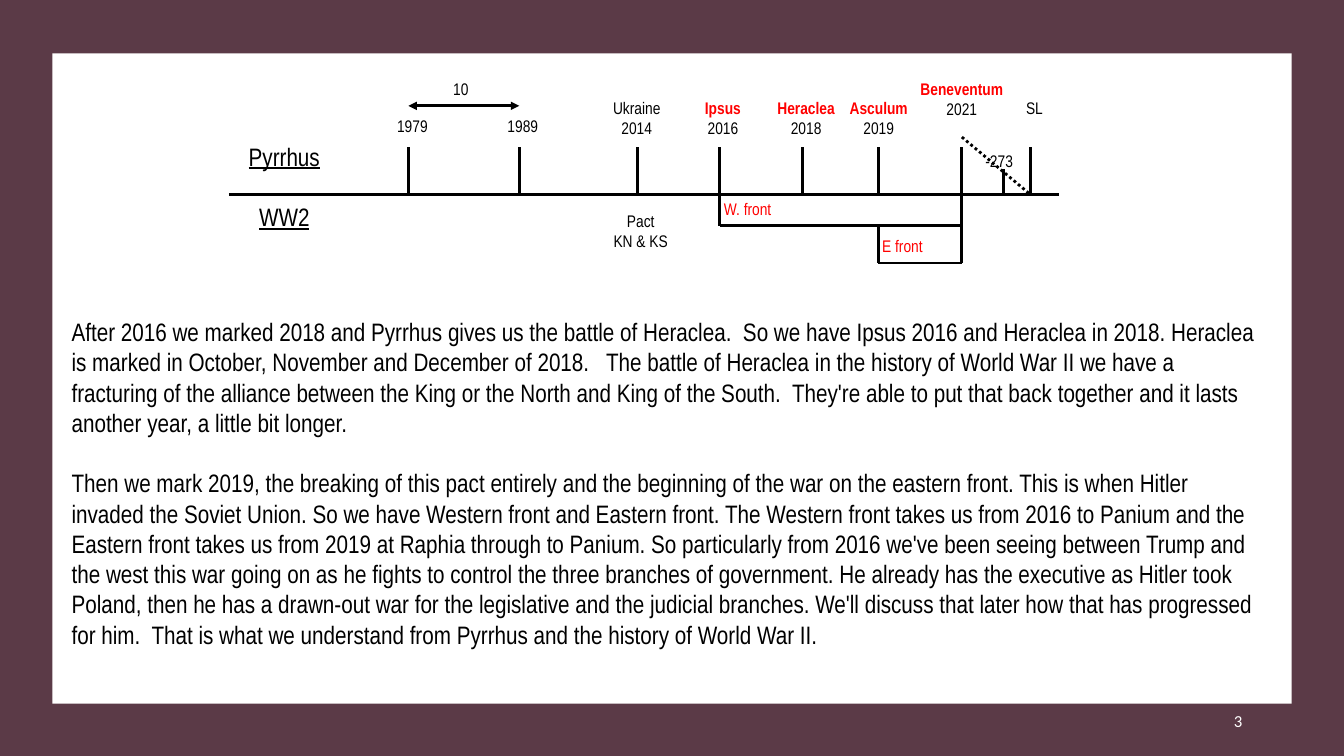
from dataclasses import dataclass

from lxml.etree import SubElement
from pptx import Presentation
from pptx.dml.color import RGBColor
from pptx.enum.dml import MSO_LINE
from pptx.enum.shapes import MSO_CONNECTOR, MSO_SHAPE
from pptx.enum.text import MSO_ANCHOR, MSO_AUTO_SIZE, PP_ALIGN
from pptx.oxml.ns import qn
from pptx.util import Inches, Pt


@dataclass(frozen=True)
class Theme:
    frame: RGBColor = RGBColor(0x5B, 0x3A, 0x47)
    paper: RGBColor = RGBColor(0xFF, 0xFF, 0xFF)
    ink: RGBColor = RGBColor(0, 0, 0)
    battle: RGBColor = RGBColor(0xFF, 0, 0)
    face: str = "Arial Narrow"
    page_face: str = "Calibri"
    small: int = 12
    large: int = 18
    rule: int = 2
    gap: float = 21.6


THEME = Theme()

AXIS = 1.93
WEST = 2.24
EAST = 2.61
TICK = 1.46
YEARS = {1979: 4.05, 1989: 5.15, 2014: 6.32, 2016: 7.14,
         2018: 7.96, 2019: 8.71, 2021: 9.54}
END = 10.22
DEATH = 9.95

BATTLES = [
    ("Ipsus", "2016", 6.86, 0.93, 0.62),
    ("Heraclea", "2018", 7.62, 0.93, 0.75),
    ("Asculum", "2019", 8.37, 0.93, 0.69),
    ("Beneventum", "2021", 9.06, 0.74, 0.96),
]
FRONTS = [("W. front", 7.14, 1.93), ("E front", 8.71, 2.3)]
LABELS = [
    (["SL"], 10.02, 0.93, 0.48, 0.5),
    (["1979"], 3.78, 1.11, 0.62, 0.31),
    (["1989"], 4.81, 1.11, 0.75, 0.31),
    (["Ukraine", "2014"], 5.97, 0.93, 0.69, 0.5),
    (["-273"], 9.67, 1.46, 0.48, 0.28),
    (["Pact", "KN & KS"], 5.84, 2.05, 1.03, 0.62),
    (["10"], 4.26, 0.74, 0.62, 0.31),
]
STORY = [
    "After 2016 we marked 2018 and Pyrrhus gives us the battle of Heraclea.  "
    "So we have Ipsus 2016 and Heraclea in 2018. Heraclea is marked in "
    "October, November and December of 2018.   The battle of Heraclea in the "
    "history of World War II we have a fracturing of the alliance between the "
    "King or the North and King of the South.  They're able to put that back "
    "together and it lasts another year, a little bit longer.",
    "Then we mark 2019, the breaking of this pact entirely and the beginning "
    "of the war on the eastern front. This is when Hitler invaded the Soviet "
    "Union. So we have Western front and Eastern front. The Western front "
    "takes us from 2016 to Panium and the Eastern front takes us from 2019 at "
    "Raphia through to Panium. So particularly from 2016 we've been seeing "
    "between Trump and the west this war going on as he fights to control the "
    "three branches of government. He already has the executive as Hitler "
    "took Poland, then he has a drawn-out war for the legislative and the "
    "judicial branches. We'll discuss that later how that has progressed for "
    "him.  That is what we understand from Pyrrhus and the history of World "
    "War II.",
]


def add_panel(slide, left, top, width, height, color):
    panel = slide.shapes.add_shape(
        MSO_SHAPE.RECTANGLE, Inches(left), Inches(top), Inches(width), Inches(height))
    panel.shadow.inherit = False
    panel.fill.solid()
    panel.fill.fore_color.rgb = color
    panel.line.fill.background()


def add_run(para, text, size=THEME.small, color=THEME.ink, face=THEME.face,
            bold=False, under=False):
    run = para.add_run()
    run.text = text
    font = run.font
    font.name, font.size, font.color.rgb = face, Pt(size), color
    font.bold, font.underline = bold, under


def next_para(frame, index):
    return frame.add_paragraph() if index else frame.paragraphs[0]


def add_label(slide, lines, left, top, width, height,
              align=PP_ALIGN.CENTER, gap=0, inset=0.04):
    box = slide.shapes.add_textbox(
        Inches(left), Inches(top), Inches(width), Inches(height))
    frame = box.text_frame
    frame.word_wrap = True
    frame.margin_left = frame.margin_right = Inches(inset)
    frame.margin_top = frame.margin_bottom = Inches(inset)
    for index, (text, style) in enumerate(lines):
        para = next_para(frame, index)
        para.alignment = align
        para.space_before = Pt(gap if index else 0)
        add_run(para, text, **style)
    return frame


def add_rule(slide, x1, y1, x2, y2, dash=None, arrows=False):
    rule = slide.shapes.add_connector(
        MSO_CONNECTOR.STRAIGHT, Inches(x1), Inches(y1), Inches(x2), Inches(y2))
    rule.line.color.rgb = THEME.ink
    rule.line.width = Pt(THEME.rule)
    if dash:
        rule.line.dash_style = dash
    if arrows:
        for end in ("a:headEnd", "a:tailEnd"):
            SubElement(rule.line._get_or_add_ln(), qn(end), type="triangle")
    SubElement(rule._element.spPr, qn("a:effectLst"))


def add_chart_rules(slide):
    add_rule(slide, 2.27, AXIS, 10.5, AXIS)
    for x in [*YEARS.values(), END]:
        add_rule(slide, x, TICK, x, AXIS)
    add_rule(slide, DEATH, 1.68, DEATH, AXIS)
    add_rule(slide, YEARS[2021], 1.36, END, AXIS, dash=MSO_LINE.ROUND_DOT)
    add_rule(slide, YEARS[1979], 1.05, YEARS[1989], 1.05, arrows=True)
    for start, top, base in ((2016, AXIS, WEST), (2019, WEST, EAST)):
        add_rule(slide, YEARS[start], top, YEARS[start], base)
        add_rule(slide, YEARS[start], base, YEARS[2021], base)
    add_rule(slide, YEARS[2021], AXIS, YEARS[2021], EAST)


def add_chart_labels(slide):
    red = {"color": THEME.battle}
    for name, year, left, top, width in BATTLES:
        add_label(slide, [(name, {**red, "bold": True}), (year, {})],
                  left, top, width, 1.43 - top)
    for name, left, top in FRONTS:
        add_label(slide, [(name, red)], left, top, 1.03, 0.31, PP_ALIGN.LEFT)
    for lines, *place in LABELS:
        add_label(slide, [(line, {}) for line in lines], *place)
    head = {"size": THEME.large, "under": True}
    add_label(slide, [("Pyrrhus", head), ("WW2", head)],
              2.27, 1.36, 1.1, 1.01, gap=THEME.gap)


def fill_body(slide):
    body = slide.placeholders[1]
    body.left, body.top = Inches(0.61), Inches(3.09)
    body.width, body.height = Inches(11.96), Inches(4.04)
    frame = body.text_frame
    frame.word_wrap = True
    frame.auto_size = MSO_AUTO_SIZE.NONE
    frame.vertical_anchor = MSO_ANCHOR.TOP
    for index, text in enumerate(STORY):
        para = next_para(frame, index)
        para.alignment = PP_ALIGN.LEFT
        para.space_before = Pt(THEME.gap if index else 0)
        props = para._p.get_or_add_pPr()
        props.set("marL", "0")
        props.set("indent", "0")
        SubElement(props, qn("a:buNone"))
        add_run(para, text, size=THEME.large)
    slide.shapes._spTree.append(body._element)


def main():
    deck = Presentation()
    deck.slide_width, deck.slide_height = Inches(13.33), Inches(7.5)
    slide = deck.slides.add_slide(deck.slide_layouts[1])
    title = slide.shapes.title._element
    title.getparent().remove(title)

    add_panel(slide, 0, 0, 13.33, 7.5, THEME.frame)
    add_panel(slide, 0.52, 0.53, 12.29, 6.45, THEME.paper)
    page = {"color": THEME.paper, "face": THEME.page_face}
    number = add_label(slide, [("3", page)], 9.42, 6.95, 3, 0.4,
                       PP_ALIGN.RIGHT, inset=0.1)
    number.vertical_anchor = MSO_ANCHOR.MIDDLE
    add_chart_rules(slide)
    add_chart_labels(slide)
    fill_body(slide)
    deck.save("out.pptx")


if __name__ == "__main__":
    main()
